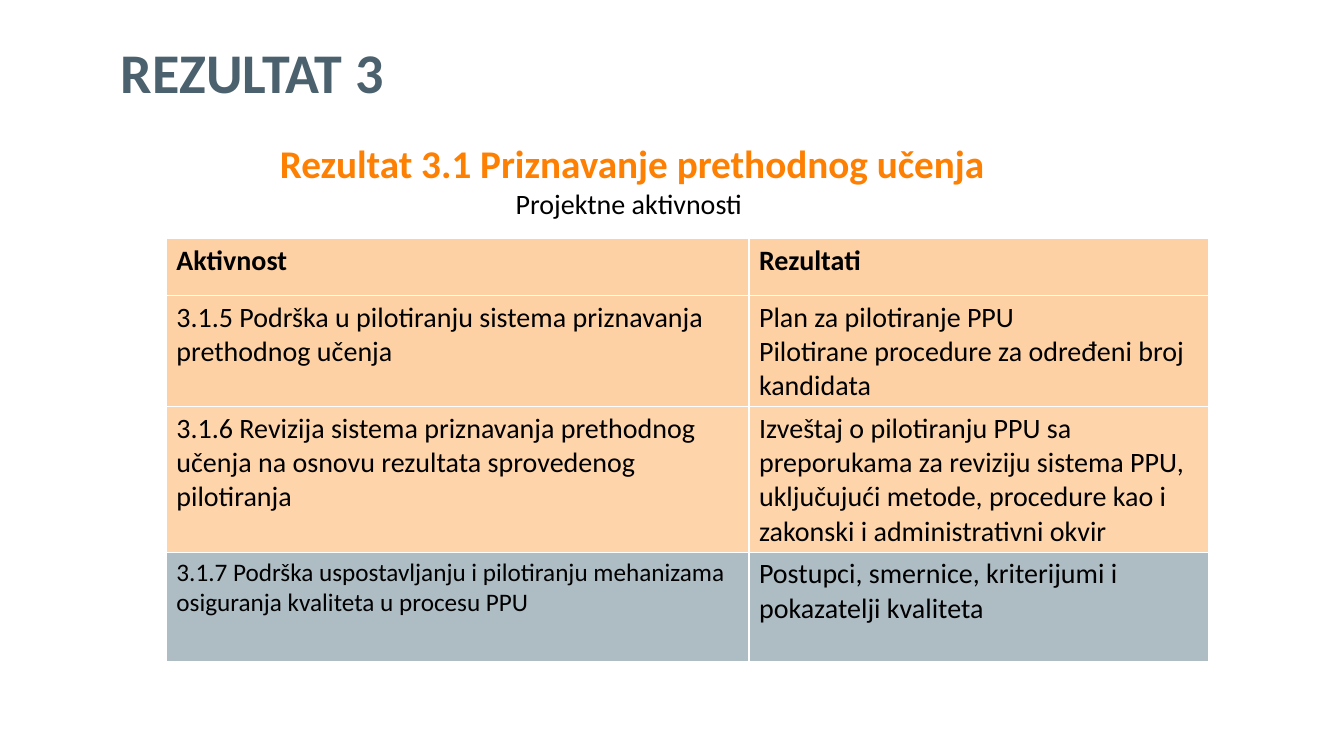
"""Build the slide on Result 3: activities and results for recognition of prior learning."""
from lxml import etree
from pptx import Presentation
from pptx.dml.color import RGBColor
from pptx.enum.text import MSO_ANCHOR, PP_ALIGN
from pptx.oxml.ns import qn
from pptx.util import Pt

CENTER, LEFT = PP_ALIGN.CENTER, PP_ALIGN.LEFT
TOP, MIDDLE = MSO_ANCHOR.TOP, MSO_ANCHOR.MIDDLE

COLORS = {"slate": "4B616D", "orange": "FD8003", "text": "000000",
          "peach": "FEAB58", "steel": "5F7B8B"}
FONT = "Calibri"
BODY_SIZE = 20

TITLE = [("REZULTAT 3", 40, "slate", True)]
SUBTITLE = [("Rezultat 3.1 Priznavanje prethodnog učenja", 28, "orange", True),
            ("Projektne aktivnosti ", BODY_SIZE, "text", False)]
ROWS = [
    {"height": 41, "fill": "peach", "opacity": 54, "bold": True,
     "cells": [["Aktivnost"], ["Rezultati"]]},
    {"height": 79, "fill": "peach", "opacity": 54,
     "cells": [["3.1.5 Podrška u pilotiranju sistema priznavanja prethodnog učenja"],
               ["Plan za pilotiranje PPU",
                "Pilotirane procedure za određeni broj kandidata"]]},
    {"height": 104, "fill": "peach", "opacity": 50,
     "cells": [["3.1.6 Revizija sistema priznavanja prethodnog učenja na osnovu "
                "rezultata sprovedenog pilotiranja"],
               ["Izveštaj o pilotiranju PPU sa preporukama za reviziju sistema PPU, "
                "uključujući metode, procedure kao i zakonski i administrativni okvir"]]},
    {"height": 78, "fill": "steel", "opacity": 50, "sizes": (18, BODY_SIZE),
     "cells": [["3.1.7 Podrška uspostavljanju i pilotiranju mehanizama osiguranja "
                "kvaliteta u procesu PPU"],
               ["Postupci, smernice, kriterijumi i pokazatelji kvaliteta"]]},
]
COLUMN_WIDTHS = (416.2, 328.3)
TABLE_LEFT, TABLE_TOP = 118.8, 170.2
TEXT_LEFT, TEXT_WIDTH = 79.2, 744.5


def write(frame, lines, align=LEFT):
    for index, (text, size, color, bold) in enumerate(lines):
        para = frame.add_paragraph() if index else frame.paragraphs[0]
        para.text = text
        para.alignment = align
        font = para.font
        font.name, font.size, font.bold = FONT, Pt(size), bold
        font.color.rgb = RGBColor.from_string(COLORS[color])


def add_text(page, top, height, lines, align, anchor):
    box = page.shapes.add_textbox(Pt(TEXT_LEFT), Pt(top), Pt(TEXT_WIDTH), Pt(height))
    frame = box.text_frame
    frame.word_wrap = True
    frame.vertical_anchor = anchor
    write(frame, lines, align)
    return frame


def fill_cell(cell, color, opacity):
    cell.fill.solid()
    cell.fill.fore_color.rgb = RGBColor.from_string(COLORS[color])
    tint = cell._tc.tcPr.find(".//" + qn("a:srgbClr"))
    etree.SubElement(tint, qn("a:alpha")).set("val", str(opacity * 1000))


def add_activities(page):
    height = sum(row["height"] for row in ROWS)
    table = page.shapes.add_table(
        len(ROWS), len(COLUMN_WIDTHS), Pt(TABLE_LEFT), Pt(TABLE_TOP),
        Pt(sum(COLUMN_WIDTHS)), Pt(height)).table
    for column, width in zip(table.columns, COLUMN_WIDTHS):
        column.width = Pt(width)
    for row_index, row in enumerate(ROWS):
        table.rows[row_index].height = Pt(row["height"])
        sizes = row.get("sizes", (BODY_SIZE, BODY_SIZE))
        for column_index, (texts, size) in enumerate(zip(row["cells"], sizes)):
            cell = table.cell(row_index, column_index)
            fill_cell(cell, row["fill"], row["opacity"])
            write(cell.text_frame,
                  [(text, size, "text", row.get("bold", False)) for text in texts])


def main():
    deck = Presentation()
    deck.slide_width, deck.slide_height = Pt(960), Pt(540)
    page = deck.slides.add_slide(deck.slide_layouts[6])
    title = add_text(page, 36.7, 34.6, TITLE, LEFT, MIDDLE)
    title.paragraphs[0].line_spacing = 0.9
    add_text(page, 95.8, 65.5, SUBTITLE, CENTER, TOP)
    add_activities(page)
    deck.save("out.pptx")


if __name__ == "__main__":
    main()
